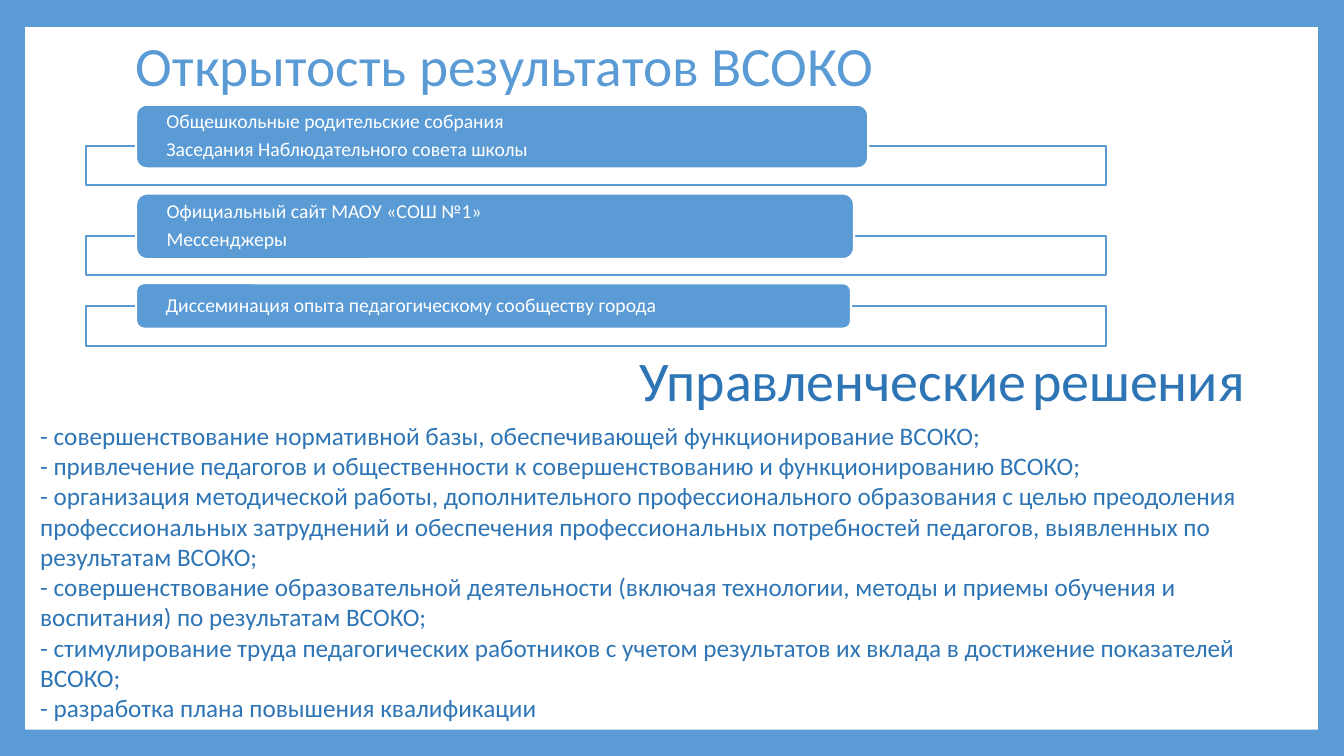
from pptx import Presentation
from pptx.dml.color import RGBColor
from pptx.enum.shapes import MSO_SHAPE
from pptx.enum.text import MSO_ANCHOR, PP_ALIGN
from pptx.util import Emu, Pt

# Content
BLUE, DARK_BLUE, WHITE = "5B9BD5", "2E75B6", "FFFFFF"
FONT = "Calibri"
TITLE = "Открытость результатов ВСОКО"
# Each channel: frame top, label top, label width, label height, lines
CHANNELS = [
    (145, 104, 726, 63, ["Общешкольные родительские собрания",
                         "Заседания Наблюдательного совета школы"]),
    (234, 192, 712, 65, ["Официальный сайт МАОУ «СОШ №1»", "Мессенджеры"]),
    (304, 281, 709, 45, ["Диссеминация опыта педагогическому сообществу города"]),
]
DECISIONS_HEADING = [("Управленческие", 40), (" ", 18), ("решения", 40)]
DECISIONS = [
    "- совершенствование нормативной базы, обеспечивающей функционирование ВСОКО;",
    "- привлечение педагогов и общественности к совершенствованию и функционированию ВСОКО;",
    "- организация методической работы, дополнительного профессионального образования с целью "
    "преодоления профессиональных затруднений и обеспечения профессиональных потребностей "
    "педагогов, выявленных по результатам ВСОКО;",
    "- совершенствование образовательной деятельности (включая технологии, методы и приемы "
    "обучения и воспитания) по результатам ВСОКО;",
    "- стимулирование труда педагогических работников с учетом результатов их вклада в "
    "достижение показателей ВСОКО;",
    "- разработка плана повышения квалификации",
]


def px(length):
    return Emu(length * 9144)  # 100 px to the inch


def color(value):
    return RGBColor.from_string(value)


def style(font, size, value):
    font.name = FONT
    font.size = Pt(size)
    font.color.rgb = color(value)


def add_box(kind, left, top, width, height, fill, line=None):
    shape = slide.shapes.add_shape(kind, px(left), px(top), px(width), px(height))
    shape.shadow.inherit = False
    shape.fill.solid()
    shape.fill.fore_color.rgb = color(fill)
    if line:
        shape.line.color.rgb = color(line)
        shape.line.width = Pt(1.5)
    else:
        shape.line.fill.background()
    return shape


def add_text(left, top, width, height):
    frame = slide.shapes.add_textbox(px(left), px(top), px(width), px(height)).text_frame
    frame.word_wrap = True
    return frame


def write_lines(frame, lines, size, value):
    frame.text = "\n".join(lines)
    for paragraph in frame.paragraphs:
        paragraph.alignment = PP_ALIGN.LEFT
        for run in paragraph.runs:
            style(run.font, size, value)


presentation = Presentation()
presentation.slide_width, presentation.slide_height = px(1333), px(750)
slide = presentation.slides.add_slide(presentation.slide_layouts[6])

# Blue border around a white page
slide.background.fill.solid()
slide.background.fill.fore_color.rgb = color(BLUE)
add_box(MSO_SHAPE.RECTANGLE, 25, 27, 1282, 697, WHITE)

# Title
title = add_text(125, 35, 1080, 65)
title.vertical_anchor = MSO_ANCHOR.MIDDLE
write_lines(title, [TITLE], 39.6, BLUE)
title.paragraphs[0].line_spacing = 0.9

# Channels: an outlined frame with a rounded label over its top edge
for frame_top, label_top, label_width, label_height, lines in CHANNELS:
    add_box(MSO_SHAPE.RECTANGLE, 85, frame_top, 1012, 39, WHITE, BLUE)
    label = add_box(MSO_SHAPE.ROUNDED_RECTANGLE, 135, label_top,
                    label_width, label_height, BLUE, WHITE).text_frame
    label.word_wrap = True
    label.vertical_anchor = MSO_ANCHOR.MIDDLE
    label.margin_left = label.margin_right = px(27)
    label.margin_top = label.margin_bottom = 0
    write_lines(label, lines, 14, WHITE)
    for paragraph in label.paragraphs:
        paragraph.line_spacing = 0.9
        paragraph.space_after = Pt(5)

# Decisions heading
heading = add_text(624, 338, 708, 77).paragraphs[0]
for text, size in DECISIONS_HEADING:
    run = heading.add_run()
    run.text = text
    style(run.font, size, DARK_BLUE)

# Decisions list
write_lines(add_text(30, 412, 1271, 313), DECISIONS, 18, DARK_BLUE)

presentation.save("out.pptx")
